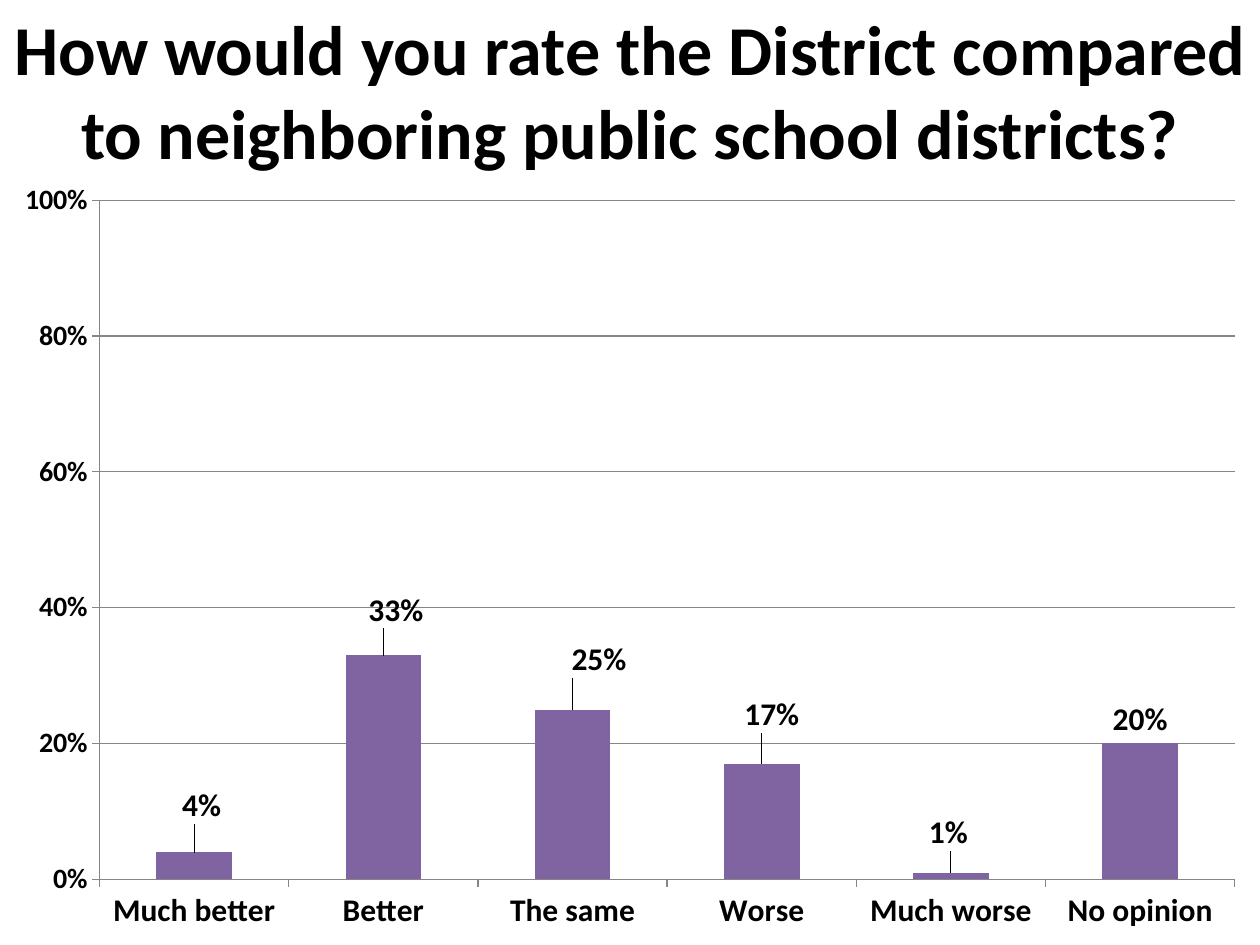
from copy import deepcopy
from dataclasses import dataclass

from pptx import Presentation
from pptx.chart.data import CategoryChartData
from pptx.dml.color import RGBColor
from pptx.enum.chart import XL_CHART_TYPE as ChartType
from pptx.enum.chart import XL_LABEL_POSITION as LabelPosition
from pptx.enum.chart import XL_TICK_MARK as TickMark
from pptx.enum.text import MSO_ANCHOR, PP_ALIGN
from pptx.oxml import parse_xml
from pptx.oxml.ns import nsdecls, qn
from pptx.util import Inches, Pt

BLACK = RGBColor(0x00, 0x00, 0x00)
GRAY = RGBColor(0x86, 0x86, 0x86)
PURPLE = RGBColor(0x80, 0x64, 0xA2)
FONT = "Calibri"
QUESTION = ("How would you rate the District compared "
            "to neighboring public school districts?")
CHART_TOP, CHART_WIDTH, CHART_HEIGHT = 1.33, 10, 6.17


@dataclass(frozen=True)
class Rating:
    """One answer; its label shift is in inches from the usual place."""
    answer: str
    share: float
    shift_x: float = 0
    shift_y: float = 0


RATINGS = [
    Rating("Much better", 0.04, 0.06, -0.18),
    Rating("Better", 0.33, 0.10, -0.17),
    Rating("The same", 0.25, 0.21, -0.21),
    Rating("Worse", 0.17, 0.08, -0.20),
    Rating("Much worse", 0.01, -0.02, -0.13),
    Rating("No opinion", 0.20),
]


def style_font(font, size: int, bold: bool = True) -> None:
    font.name = FONT
    font.size = Pt(size)
    font.bold = bold
    font.color.rgb = BLACK


def manual_layout(x: float, y: float, extra: str = "", modes: str = ""):
    """Turn inches within the chart into a layout element."""
    return parse_xml(
        f'<c:layout {nsdecls("c")}><c:manualLayout>{modes}'
        f'<c:x val="{x / CHART_WIDTH}"/><c:y val="{y / CHART_HEIGHT}"/>'
        f'{extra}</c:manualLayout></c:layout>')


def fix_plot_area(chart, left: float, top: float,
                  width: float, height: float) -> None:
    plot_area = chart._chartSpace.find(".//" + qn("c:plotArea"))
    old = plot_area.find(qn("c:layout"))
    if old is not None:
        plot_area.remove(old)
    plot_area.insert(0, manual_layout(
        left, top,
        f'<c:w val="{width / CHART_WIDTH}"/><c:h val="{height / CHART_HEIGHT}"/>',
        '<c:layoutTarget val="inner"/><c:xMode val="edge"/><c:yMode val="edge"/>'))


def style_axis(axis, size: int) -> None:
    style_font(axis.tick_labels.font, size)
    axis.major_tick_mark = TickMark.OUTSIDE
    axis.minor_tick_mark = TickMark.NONE
    axis.format.line.color.rgb = GRAY
    axis.format.line.width = Pt(0.75)


def label_bars(series) -> None:
    labels = series.data_labels
    labels.show_value = True
    labels.number_format = "0%"
    labels.number_format_is_linked = False
    labels.position = LabelPosition.OUTSIDE_END
    style_font(labels.font, 18)
    number_format = series._element.find(
        qn("c:dLbls") + "/" + qn("c:numFmt"))
    for index, rating in enumerate(RATINGS):
        if not (rating.shift_x or rating.shift_y):
            continue
        label = series.points[index].data_label
        style_font(label.font, 18)
        label.position = LabelPosition.OUTSIDE_END
        element = series._element.findall(".//" + qn("c:dLbl"))[-1]
        element.insert(1, manual_layout(rating.shift_x, rating.shift_y))
        element.insert(2, deepcopy(number_format))


def add_title(slide) -> None:
    title = slide.shapes.title
    title.left, title.top = Inches(0), Inches(0)
    title.width, title.height = Inches(10), Inches(1.42)
    frame = title.text_frame
    frame.word_wrap = True
    frame.vertical_anchor = MSO_ANCHOR.MIDDLE
    paragraph = frame.paragraphs[0]
    paragraph.alignment = PP_ALIGN.CENTER
    run = paragraph.add_run()
    run.text = QUESTION
    style_font(run.font, 40)


def add_ratings_chart(slide) -> None:
    data = CategoryChartData(number_format="0%")
    data.categories = [rating.answer for rating in RATINGS]
    data.add_series("Series 1", [rating.share for rating in RATINGS])
    chart = slide.shapes.add_chart(
        ChartType.COLUMN_CLUSTERED, Inches(0), Inches(CHART_TOP),
        Inches(CHART_WIDTH), Inches(CHART_HEIGHT), data).chart
    style_font(chart.font, 18, bold=False)
    chart.has_legend = False
    chart.has_title = False
    fix_plot_area(chart, left=0.79, top=0.26, width=9.01, height=5.39)

    style_axis(chart.category_axis, 18)
    shares = chart.value_axis
    style_axis(shares, 16)
    shares.minimum_scale, shares.maximum_scale = 0, 1
    shares.major_unit = 0.2
    shares.tick_labels.number_format = "0%"
    shares.tick_labels.number_format_is_linked = False
    shares.has_major_gridlines = True
    shares.major_gridlines.format.line.color.rgb = GRAY
    shares.major_gridlines.format.line.width = Pt(0.75)

    plot = chart.plots[0]
    plot.gap_width = 150
    plot.vary_by_categories = False
    bars = plot.series[0]
    bars.format.fill.solid()
    bars.format.fill.fore_color.rgb = PURPLE
    label_bars(bars)


def main() -> None:
    deck = Presentation()
    deck.slide_width, deck.slide_height = Inches(10), Inches(7.5)
    slide = deck.slides.add_slide(deck.slide_layouts.get_by_name("Title Only"))
    add_title(slide)
    add_ratings_chart(slide)
    deck.save("out.pptx")


if __name__ == "__main__":
    main()
